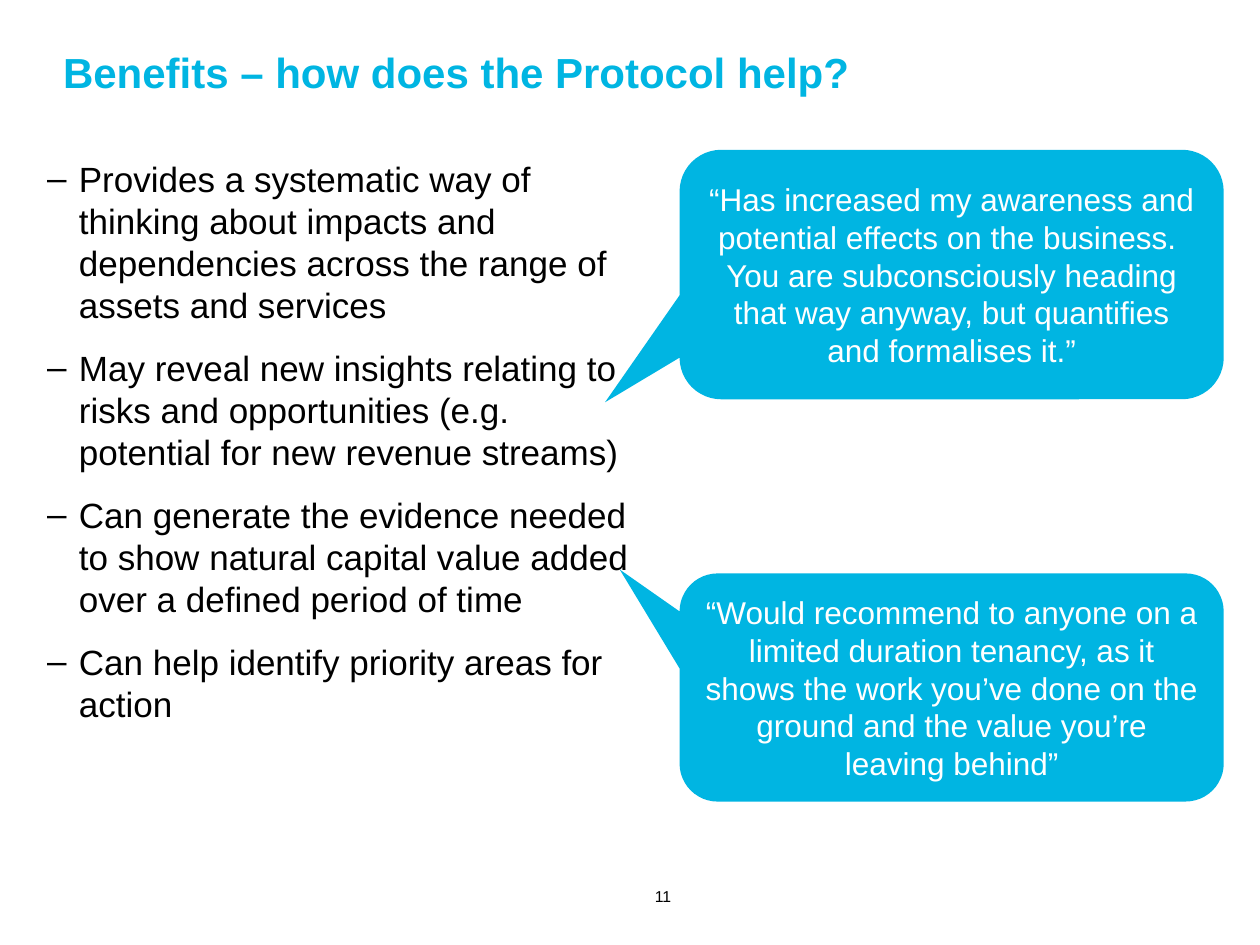
"""Build the slide on the benefits of the Protocol."""
from dataclasses import dataclass

import pptx
import pptx.dml.color
import pptx.enum.shapes
import pptx.enum.text
import pptx.oxml
import pptx.oxml.ns
import pptx.util

Cm = pptx.util.Cm
Pt = pptx.util.Pt
Align = pptx.enum.text.PP_ALIGN
Anchor = pptx.enum.text.MSO_ANCHOR


@dataclass(frozen=True)
class Theme:
    font: str = "Arial"
    accent: str = "00B5E2"
    ink: str = "000000"
    paper: str = "FFFFFF"
    title_size: float = 24
    body_size: float = 20
    quote_size: float = 18
    number_size: float = 9
    leading: float = 1.2
    paragraph_gap: float = 12
    indent: float = 0.64


THEME = Theme()

BENEFITS = [
    "Provides a systematic way of thinking about impacts and dependencies across the range of assets and services",
    "May reveal new insights relating to risks and opportunities (e.g. potential for new revenue streams)",
    "Can generate the evidence needed to show natural capital value added over a defined period of time",
    "Can help identify priority areas for action",
]

QUOTES = [
    (
        "“Has increased my awareness and potential effects on the business.  You are subconsciously "
        "heading that way anyway, but quantifies and formalises it.”",
        3.02, 5.03, (-0.637, 0.512, 0.167),
    ),
    (
        "“Would recommend to anyone on a limited duration tenancy, as it shows the work you’ve done "
        "on the ground and the value you’re leaving behind”",
        11.56, 4.6, (-0.61, -0.517, 0.167),
    ),
]


def rgb(value):
    return pptx.dml.color.RGBColor.from_string(value)


def place(shape, left, top, width, height):
    shape.left, shape.top = Cm(left), Cm(top)
    shape.width, shape.height = Cm(width), Cm(height)


def add_dash(paragraph):
    properties = paragraph._p.get_or_add_pPr()
    properties.set("marL", str(Cm(THEME.indent)))
    properties.set("indent", str(-Cm(THEME.indent)))
    namespace = pptx.oxml.ns.nsdecls("a")
    for markup in (
        f'<a:buFont {namespace} typeface="{THEME.font}"/>',
        f'<a:buChar {namespace} char="–"/>',
    ):
        properties.append(pptx.oxml.parse_xml(markup))


def write_text(shape, texts, *, size, color=THEME.ink, bold=False, align=Align.LEFT,
               anchor=Anchor.TOP, inset=0, dashes=False):
    frame = shape.text_frame
    frame.word_wrap = True
    frame.auto_size = pptx.enum.text.MSO_AUTO_SIZE.NONE
    frame.vertical_anchor = anchor
    frame.margin_left = frame.margin_right = Cm(inset)
    frame.margin_top = frame.margin_bottom = Cm(inset / 2)
    for index, text in enumerate(texts):
        paragraph = frame.add_paragraph() if index else frame.paragraphs[0]
        if dashes:
            add_dash(paragraph)
        paragraph.alignment = align
        paragraph.line_spacing = Pt(size * THEME.leading)
        paragraph.space_before = Pt(THEME.paragraph_gap if index else 0)
        span = paragraph.add_run()
        span.text = text
        span.font.name = THEME.font
        span.font.size = Pt(size)
        span.font.bold = bold
        span.font.color.rgb = rgb(color)


def add_title(page, text):
    title = page.shapes.title
    place(title, 1.27, 0.94, 22.86, 2.24)
    write_text(title, [text], size=THEME.title_size, color=THEME.accent, bold=True)


def add_benefits(page, texts):
    body = page.placeholders[1]
    place(body, 0.95, 3.18, 11.86, 14.02)
    write_text(body, texts, size=THEME.body_size, dashes=True)


def add_quote(page, text, top, height, adjustments):
    callout = page.shapes.add_shape(
        pptx.enum.shapes.MSO_SHAPE.ROUNDED_RECTANGULAR_CALLOUT,
        Cm(13.7), Cm(top), Cm(10.97), Cm(height),
    )
    for index, value in enumerate(adjustments):
        callout.adjustments[index] = value
    callout.shadow.inherit = False
    callout.fill.solid()
    callout.fill.fore_color.rgb = rgb(THEME.accent)
    callout.line.fill.background()
    write_text(callout, [text], size=THEME.quote_size, color=THEME.paper,
               align=Align.CENTER, anchor=Anchor.MIDDLE, inset=0.25)


def add_page_number(page, text):
    box = page.shapes.add_textbox(Cm(13.2), Cm(17.86), Cm(2.49), Cm(0.43))
    write_text(box, [text], size=THEME.number_size, anchor=Anchor.MIDDLE)


def main():
    deck = pptx.Presentation()
    deck.slide_width, deck.slide_height = Cm(25.4), Cm(19.05)
    page = deck.slides.add_slide(deck.slide_layouts[1])
    add_title(page, "Benefits – how does the Protocol help?")
    add_page_number(page, "11")
    add_benefits(page, BENEFITS)
    for quote in QUOTES:
        add_quote(page, *quote)
    deck.save("out.pptx")


if __name__ == "__main__":
    main()
